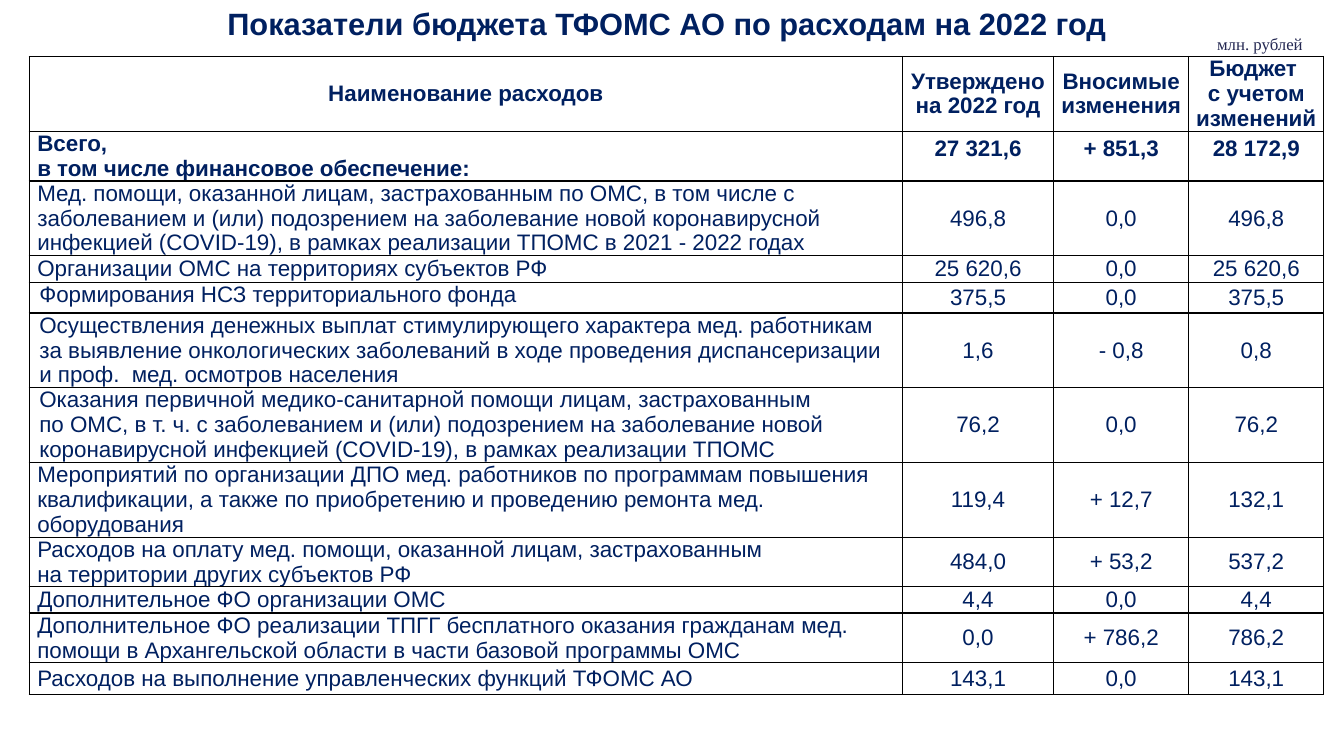
from lxml import etree
from pptx import Presentation
from pptx.dml.color import RGBColor
from pptx.enum.text import MSO_ANCHOR as Anchor, PP_ALIGN as Align
from pptx.oxml.ns import qn
from pptx.util import Inches, Pt

COLORS = {"navy": "002060", "note": "242852", "line": "000000"}

COLS = [8.66, 1.5, 1.34, 1.34]
HEIGHTS = [0.69, 0.46, 0.46, 0.27, 0.3, 0.69, 0.69, 0.69, 0.46, 0.26, 0.39, 0.31]
HEAD, TOTAL = 0, 1
WIDE = (1, 2)    # rows whose figures have wide margins
INSET = (4, 5, 6)    # rows whose names are set at the top, further in

ROWS = [
    ("Наименование расходов", "Утверждено\nна 2022 год", "Вносимые изменения",
     "Бюджет \nс учетом изменений"),
    ("Всего,\nв том числе финансовое обеспечение:", "27 321,6", "+ 851,3", "28 172,9"),
    ("Мед. помощи, оказанной лицам, застрахованным по ОМС, в том числе с "
     "заболеванием и (или) подозрением на заболевание новой коронавирусной "
     "инфекцией (COVID-19), в рамках реализации ТПОМС в 2021 - 2022 годах",
     "496,8", "0,0", "496,8"),
    ("Организации ОМС на территориях субъектов РФ", "25 620,6", "0,0", "25 620,6"),
    ("Формирования НСЗ территориального фонда", "375,5", "0,0", "375,5"),
    ("Осуществления денежных выплат стимулирующего характера мед. работникам "
     "за выявление онкологических заболеваний в ходе проведения диспансеризации "
     "и проф.  мед. осмотров населения", "1,6", "- 0,8", "0,8"),
    ("Оказания первичной медико-санитарной помощи лицам, застрахованным \v"
     "по ОМС, в т. ч. с заболеванием и (или) подозрением на заболевание новой "
     "коронавирусной инфекцией (COVID-19), в рамках реализации ТПОМС",
     "76,2", "0,0", "76,2"),
    ("Мероприятий по организации ДПО мед. работников по программам повышения "
     "квалификации, а также по приобретению и проведению ремонта мед. оборудования",
     "119,4", "+ 12,7", "132,1"),
    ("Расходов на оплату мед. помощи, оказанной лицам, застрахованным \v"
     "на территории других субъектов РФ", "484,0", "+ 53,2", "537,2"),
    ("Дополнительное ФО организации ОМС", "4,4", "0,0", "4,4"),
    ("Дополнительное ФО реализации ТПГГ бесплатного оказания гражданам мед. "
     "помощи в Архангельской области в части базовой программы ОМС",
     "0,0", "+ 786,2", "786,2"),
    ("Расходов на выполнение управленческих функций ТФОМС АО", "143,1", "0,0", "143,1"),
]


def write(frame, text, size=16, font="Arial", color="navy", bold=False, align=Align.CENTER):
    frame.text = text
    frame.word_wrap = True
    for para in frame.paragraphs:
        para.alignment = align
        para.line_spacing = 1.0
        para.space_before = Pt(0)
        for run in para.runs:
            run.font.size, run.font.name, run.font.bold = Pt(size), font, bold
            run.font.color.rgb = RGBColor.from_string(COLORS[color])


def rule(cell):
    """Draw a line on all four sides of a cell and leave it unfilled."""
    props = cell._tc.get_or_add_tcPr()
    for side in ("lnL", "lnR", "lnT", "lnB"):
        line = etree.SubElement(props, qn(f"a:{side}"), w=str(Pt(1)))
        fill = etree.SubElement(line, qn("a:solidFill"))
        etree.SubElement(fill, qn("a:srgbClr"), val=COLORS["line"])
    cell.fill.background()


def layout(row, col):
    """Give side margin, top margin and anchor of a cell."""
    if col == 0:
        if row in INSET:
            return 0.1, 0, Anchor.TOP
        return 0.08, 0, Anchor.BOTTOM if row in WIDE else Anchor.MIDDLE
    if row == HEAD:
        return 0.06, 0, Anchor.MIDDLE
    if row in WIDE:
        return 0.13, 0.05, Anchor.TOP if row == TOTAL else Anchor.MIDDLE
    return 0.08, 0, Anchor.MIDDLE


def add_title(slide, left, top, width, height):
    title = slide.shapes.title
    title.left, title.top = Inches(left), Inches(top)
    title.width, title.height = Inches(width), Inches(height)
    write(title.text_frame, "Показатели бюджета ТФОМС АО по расходам на 2022 год",
          size=22, bold=True)
    title.text_frame.vertical_anchor = Anchor.TOP


def add_budget(slide, left, top):
    table = slide.shapes.add_table(len(ROWS), len(COLS), Inches(left), Inches(top),
                                   Inches(sum(COLS)), Inches(sum(HEIGHTS))).table
    table.first_row = table.horz_banding = False
    for col, width in zip(table.columns, COLS):
        col.width = Inches(width)
    for r, (texts, height) in enumerate(zip(ROWS, HEIGHTS)):
        table.rows[r].height = Inches(height)
        for c, text in enumerate(texts):
            cell = table.cell(r, c)
            side, edge, cell.vertical_anchor = layout(r, c)
            cell.margin_left = cell.margin_right = Inches(side)
            cell.margin_top = cell.margin_bottom = Inches(edge)
            name = c == 0 and r != HEAD
            write(cell.text_frame, text, bold=r in (HEAD, TOTAL),
                  align=Align.LEFT if name else Align.CENTER)
            rule(cell)


def add_unit(slide, left, top, width, height):
    box = slide.shapes.add_textbox(Inches(left), Inches(top), Inches(width), Inches(height))
    write(box.text_frame, "млн. рублей", size=12, font="Times New Roman",
          color="note", align=Align.RIGHT)


def main():
    deck = Presentation()
    deck.slide_width, deck.slide_height = Inches(13.33), Inches(7.5)
    slide = deck.slides.add_slide(deck.slide_layouts[5])
    add_title(slide, 0.37, 0, 12.49, 0.39)
    add_budget(slide, 0.29, 0.56)
    add_unit(slide, 11.55, 0.29, 1.47, 0.3)
    deck.save("out.pptx")


if __name__ == "__main__":
    main()
